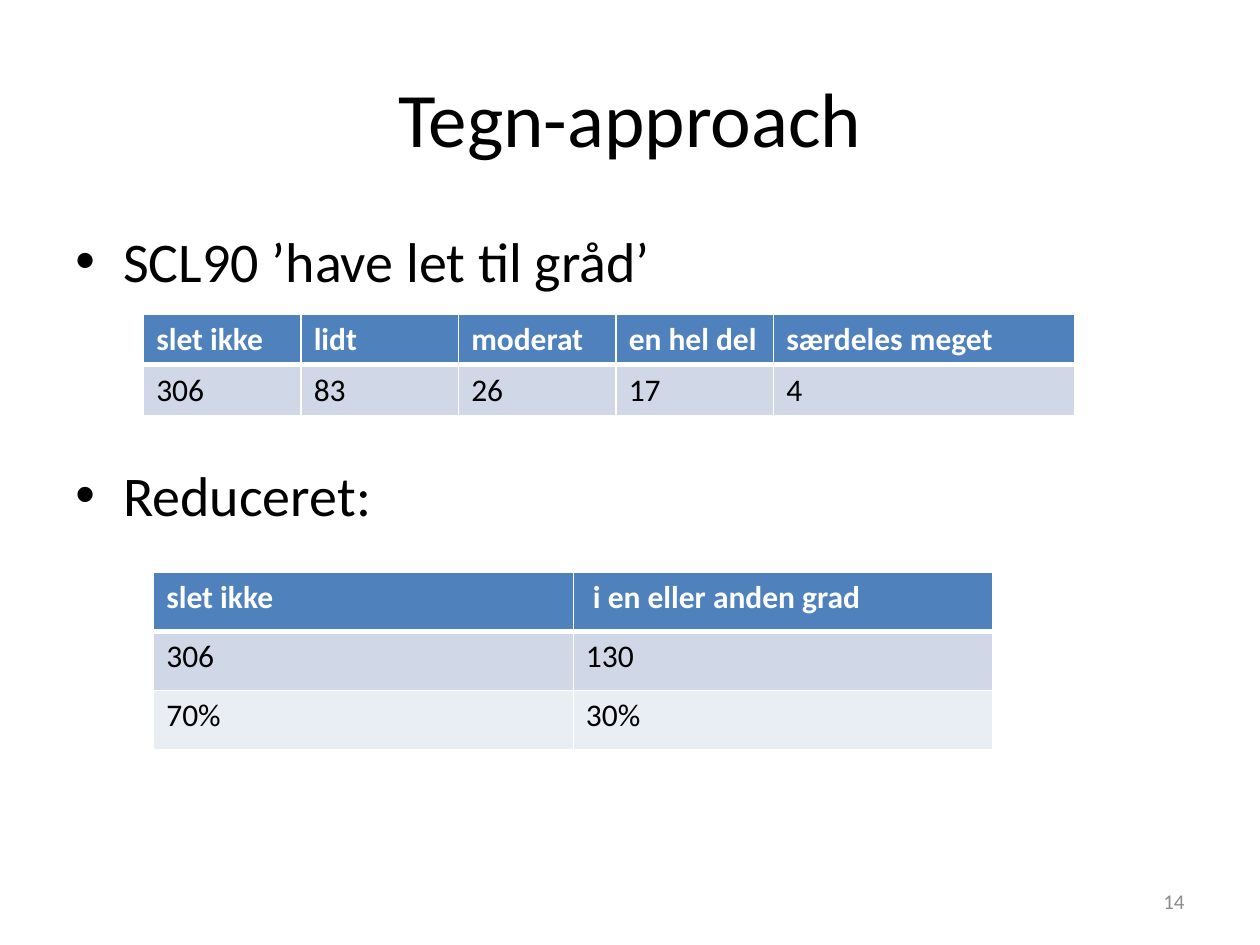
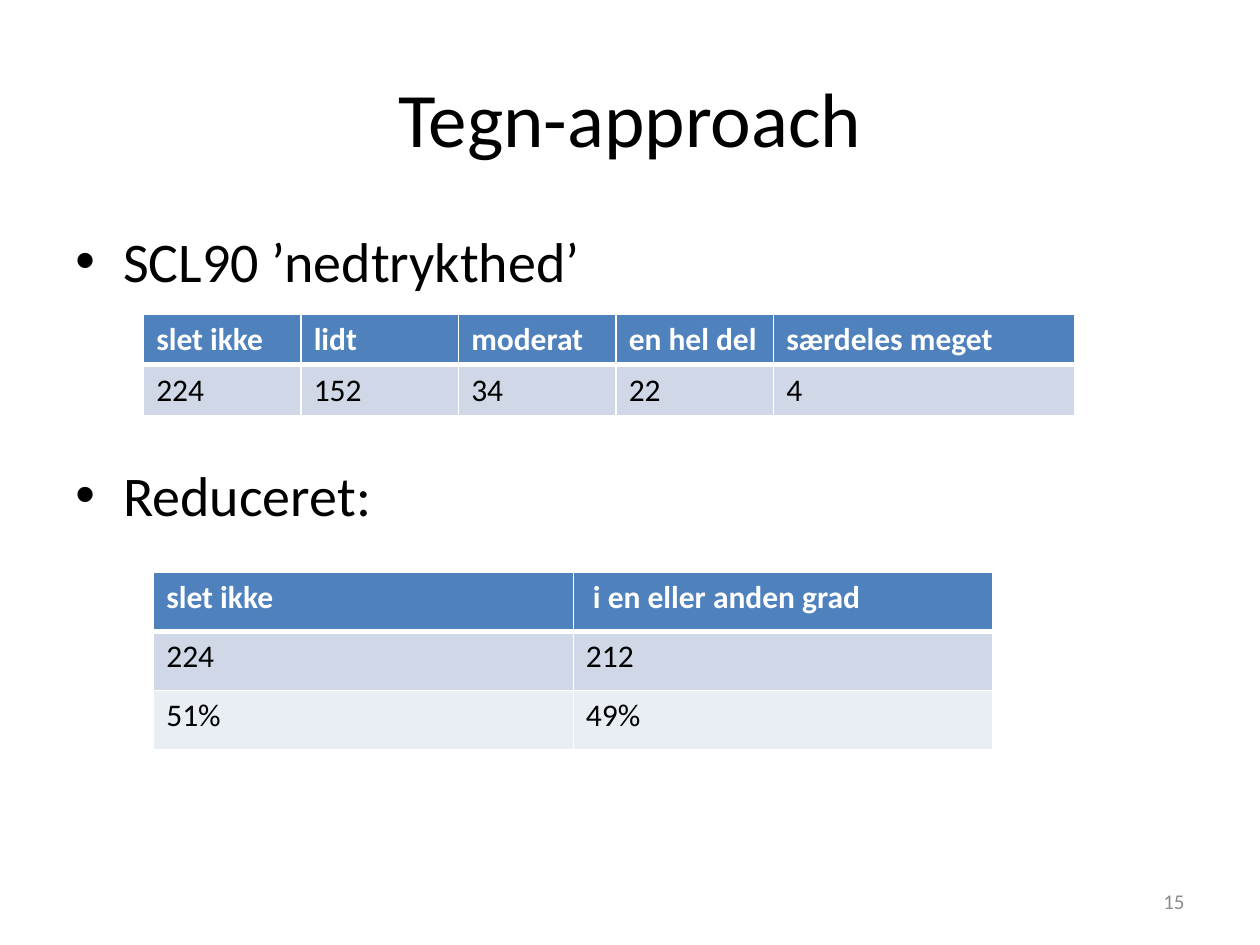
from pptx import Presentation
from pptx.dml.color import RGBColor
from pptx.enum.text import MSO_ANCHOR, PP_ALIGN
from pptx.oxml import parse_xml
from pptx.oxml.ns import nsdecls
from pptx.util import Inches, Pt

LEFT, CENTER, RIGHT = PP_ALIGN.LEFT, PP_ALIGN.CENTER, PP_ALIGN.RIGHT
TOP, MIDDLE = MSO_ANCHOR.TOP, MSO_ANCHOR.MIDDLE

FONT = "Calibri"
BLACK, WHITE, GREY = "000000", "FFFFFF", "8C8C8C"
HEADER_FILL = "4F81BD"
BAND_FILLS = ["D0D8E8", "E9EDF4"]

TITLE = "Tegn-approach"
REDUCED_LABEL = "Reduceret:"
ANSWERS = ["slet ikke", "lidt", "moderat", "en hel del", "særdeles meget"]
REDUCED_ANSWERS = ["slet ikke", " i en eller anden grad"]
FIRST_PAGE = 14
ITEMS = [
    {
        "label": "SCL90 ’have let til gråd’",
        "counts": ["306", "83", "26", "17", "4"],
        "reduced": [["306", "130"], ["70%", "30%"]],
    },
    {
        "label": "SCL90 ’nedtrykthed’",
        "counts": ["224", "152", "34", "22", "4"],
        "reduced": [["224", "212"], ["51%", "49%"]],
    },
]

# Left, top, width and height in inches
TITLE_AREA = (0.5, 0.3, 9, 1.25)
BODY_AREA = (0.5, 1.75, 9, 4.95)
NUMBER_AREA = (7.17, 6.95, 2.33, 0.4)
# Position, column widths and row height in inches
ANSWER_GRID = {"left": 1.14, "top": 2.49, "widths": [1.25] * 4 + [2.39], "row_height": 0.405}
REDUCED_GRID = {"left": 1.22, "top": 4.54, "widths": [3.33] * 2, "row_height": 0.47}
BULLET_INDENT = 0.38
REDUCED_GAP = 95  # points between the two bullets, room for the answer table


def color(value):
    return RGBColor.from_string(value)


def write(para, text, size=18, fill=BLACK, bold=False, align=LEFT, before=0):
    para.alignment = align
    para.space_before = Pt(before)
    span = para.add_run()
    span.text = text
    span.font.name = FONT
    span.font.size = Pt(size)
    span.font.bold = bold
    span.font.color.rgb = color(fill)


def add_bullet(para):
    properties = para._p.get_or_add_pPr()
    indent = Inches(BULLET_INDENT)
    properties.set("marL", str(indent))
    properties.set("indent", str(-indent))
    properties.append(parse_xml(f'<a:buFont {nsdecls("a")} typeface="Arial"/>'))
    properties.append(parse_xml(f'<a:buChar {nsdecls("a")} char="•"/>'))


def add_frame(page, area, anchor):
    box = page.shapes.add_textbox(*map(Inches, area))
    frame = box.text_frame
    frame.word_wrap = True
    frame.vertical_anchor = anchor
    return frame


def set_borders(cell, top, bottom):
    properties = cell._tc.get_or_add_tcPr()
    sides = [("lnL", 1), ("lnR", 1), ("lnT", top), ("lnB", bottom)]
    for index, (side, width) in enumerate(sides):
        line = parse_xml(
            f'<a:{side} {nsdecls("a")} w="{Pt(width)}"><a:solidFill>'
            f'<a:srgbClr val="{WHITE}"/></a:solidFill></a:{side}>'
        )
        properties.insert(index, line)


def add_grid(page, rows, left, top, widths, row_height):
    """Add a table with a header row and banded rows below it."""
    frame = page.shapes.add_table(
        len(rows), len(widths), Inches(left), Inches(top),
        Inches(sum(widths)), Inches(row_height * len(rows)),
    )
    table = frame.table
    for column, width in zip(table.columns, widths):
        column.width = Inches(width)
    for row_index, values in enumerate(rows):
        table.rows[row_index].height = Inches(row_height)
        header = row_index == 0
        fill = HEADER_FILL if header else BAND_FILLS[(row_index - 1) % 2]
        for column_index, value in enumerate(values):
            cell = table.cell(row_index, column_index)
            cell.fill.solid()
            cell.fill.fore_color.rgb = color(fill)
            set_borders(cell, top=3 if row_index == 1 else 1, bottom=3 if header else 1)
            write(cell.text_frame.paragraphs[0], value,
                  fill=WHITE if header else BLACK, bold=header)


def add_item_page(deck, item, number):
    page = deck.slides.add_slide(deck.slide_layouts[6])
    title = add_frame(page, TITLE_AREA, MIDDLE)
    write(title.paragraphs[0], TITLE, size=44, align=CENTER)

    body = add_frame(page, BODY_AREA, TOP)
    write(body.paragraphs[0], item["label"], size=32)
    write(body.add_paragraph(), REDUCED_LABEL, size=32, before=REDUCED_GAP)
    for para in body.paragraphs:
        add_bullet(para)

    add_grid(page, [ANSWERS, item["counts"]], **ANSWER_GRID)
    add_grid(page, [REDUCED_ANSWERS] + item["reduced"], **REDUCED_GRID)

    footer = add_frame(page, NUMBER_AREA, MIDDLE)
    write(footer.paragraphs[0], str(number), size=12, fill=GREY, align=RIGHT)


def main():
    deck = Presentation()
    deck.slide_width, deck.slide_height = Inches(10), Inches(7.5)
    for number, item in enumerate(ITEMS, FIRST_PAGE):
        add_item_page(deck, item, number)
    deck.save("out.pptx")


if __name__ == "__main__":
    main()
